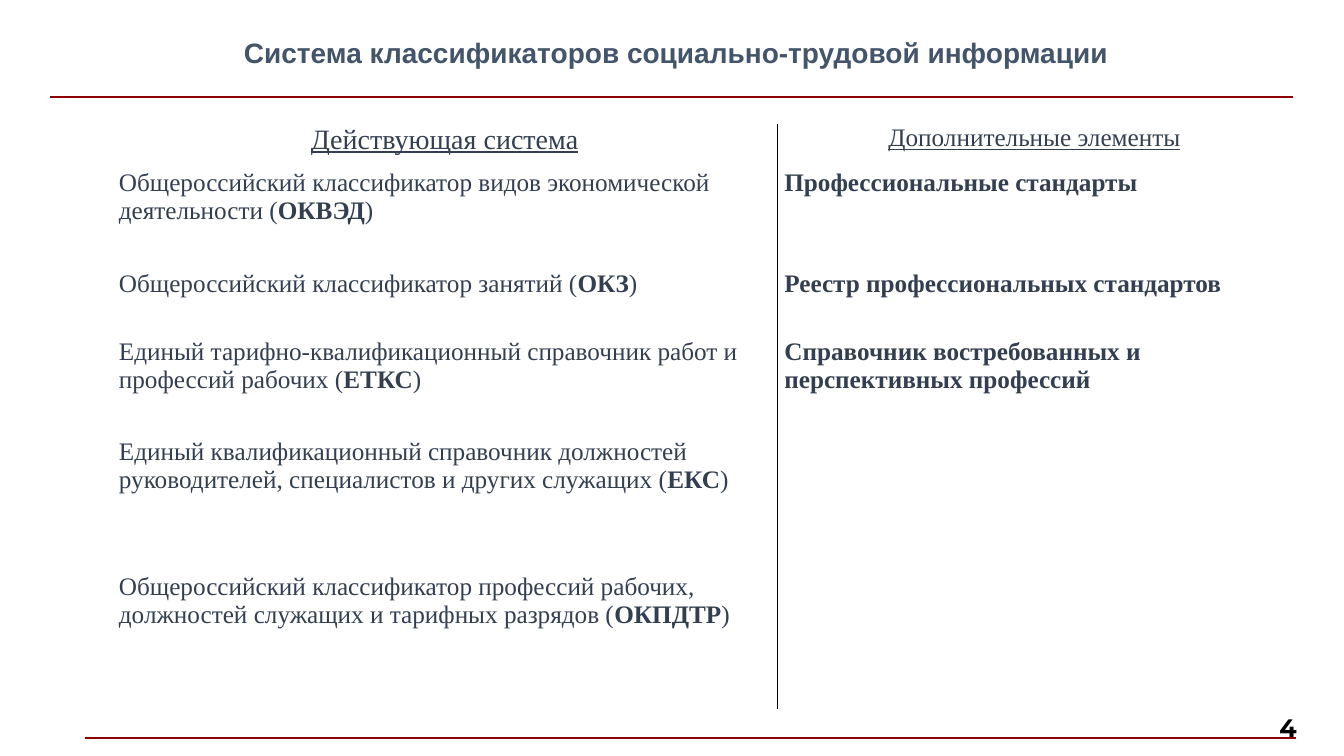
"""Build the slide on the system of classifiers of social and labour information."""
import pptx
import pptx.util
import pptx.dml.color
import pptx.enum.shapes
import pptx.enum.text
import pptx.oxml
import pptx.oxml.ns
import lxml.etree

Inches = pptx.util.Inches
RGBColor = pptx.dml.color.RGBColor
ALIGN = pptx.enum.text.PP_ALIGN
MIDDLE = pptx.enum.text.MSO_ANCHOR.MIDDLE
qn = pptx.oxml.ns.qn

RED = RGBColor(0x8E, 0x00, 0x00)
SLATE = RGBColor(0x44, 0x54, 0x6A)
NAVY = RGBColor(0x33, 0x3F, 0x50)
BLACK = RGBColor(0x00, 0x00, 0x00)
NO_STYLE = "{2D5ABB26-0587-4C30-8999-92F81FD0307C}"


def add_text(p, text, font="Times New Roman", size=18, color=NAVY,
             bold=False, underline=False, align=ALIGN.LEFT):
    p.alignment = align
    r = p.add_run()
    r.text = text
    r.font.name = font
    r.font.size = pptx.util.Pt(size)
    r.font.color.rgb = color
    r.font.bold = bold
    r.font.underline = underline


def add_border(cell, side):
    ln = pptx.oxml.parse_xml(
        f'<a:{side} xmlns:a="http://schemas.openxmlformats.org/drawingml/2006/main" w="12700">'
        f'<a:solidFill><a:srgbClr val="{BLACK}"/></a:solidFill></a:{side}>')
    cell._tc.get_or_add_tcPr().insert(0, ln)


prs = pptx.Presentation()
prs.slide_width = Inches(13.33)
prs.slide_height = Inches(7.5)
s = prs.slides.add_slide(prs.slide_layouts[5])

for x1, x2, y in [(0.84, 12.85, 7.32), (0.5, 12.82, 0.96)]:
    line = s.shapes.add_connector(pptx.enum.shapes.MSO_CONNECTOR.STRAIGHT,
                                  Inches(x1), Inches(y), Inches(x2), Inches(y))
    line.line.color.rgb = RED
    line.line.width = pptx.util.Pt(1.5)
    lxml.etree.SubElement(line._element.spPr, qn("a:effectLst"))

title = s.shapes.title
title.left, title.top = Inches(1.86), Inches(0.28)
title.width, title.height = Inches(9.69), Inches(0.47)
title.text_frame.vertical_anchor = MIDDLE
add_text(title.text_frame.paragraphs[0],
         "Система классификаторов социально-трудовой информации",
         font="Arial", size=20, color=SLATE, bold=True, align=ALIGN.CENTER)

current = [
    ("Общероссийский классификатор видов экономической деятельности", "ОКВЭД"),
    ("Общероссийский классификатор занятий", "ОКЗ"),
    ("Единый тарифно-квалификационный справочник работ и профессий рабочих", "ЕТКС"),
    ("Единый квалификационный справочник должностей руководителей, "
     "специалистов и других служащих", "ЕКС"),
    ("Общероссийский классификатор профессий рабочих, должностей служащих "
     "и тарифных разрядов", "ОКПДТР"),
]
additional = [
    "Профессиональные стандарты",
    "Реестр профессиональных стандартов",
    "Справочник востребованных и перспективных профессий",
]
widths = [6.6, 5.1]
heights = [0.45, 1, 0.67, 1, 1.34, 1.34]

frame = s.shapes.add_table(len(heights), len(widths), Inches(1.11), Inches(1.23),
                           Inches(sum(widths)), Inches(sum(heights)))
table = frame.table
table.first_row = False
table.horz_banding = False
table._tbl.tblPr.find(qn("a:tableStyleId")).text = NO_STYLE
for column, width in zip(table.columns, widths):
    column.width = Inches(width)
for row, height in zip(table.rows, heights):
    row.height = Inches(height)
    for cell, side in zip(row.cells, ["lnR", "lnL"]):
        cell.margin_left = cell.margin_right = Inches(0.07)
        cell.margin_top = cell.margin_bottom = 0
        cell.fill.background()
        add_border(cell, side)
table.cell(3, 1).merge(table.cell(5, 1))

for col, (heading, size) in enumerate([("Действующая система", 20),
                                       ("Дополнительные элементы", 18)]):
    add_text(table.cell(0, col).text_frame.paragraphs[0], heading,
             size=size, underline=True, align=ALIGN.CENTER)
for i, (name, code) in enumerate(current, 1):
    p = table.cell(i, 0).text_frame.paragraphs[0]
    add_text(p, name + " (")
    add_text(p, code, bold=True)
    add_text(p, ")")
for i, name in enumerate(additional, 1):
    add_text(table.cell(i, 1).text_frame.paragraphs[0], name, bold=True)

number = s.shapes.add_textbox(Inches(12.27), Inches(7.02), Inches(0.59), Inches(0.4))
tf = number.text_frame
tf.word_wrap = True
tf.vertical_anchor = MIDDLE
tf.margin_left = tf.margin_right = tf.margin_top = tf.margin_bottom = 0
add_text(tf.paragraphs[0], "4", font="Montserrat", color=BLACK, bold=True,
         align=ALIGN.RIGHT)

prs.save("out.pptx")
